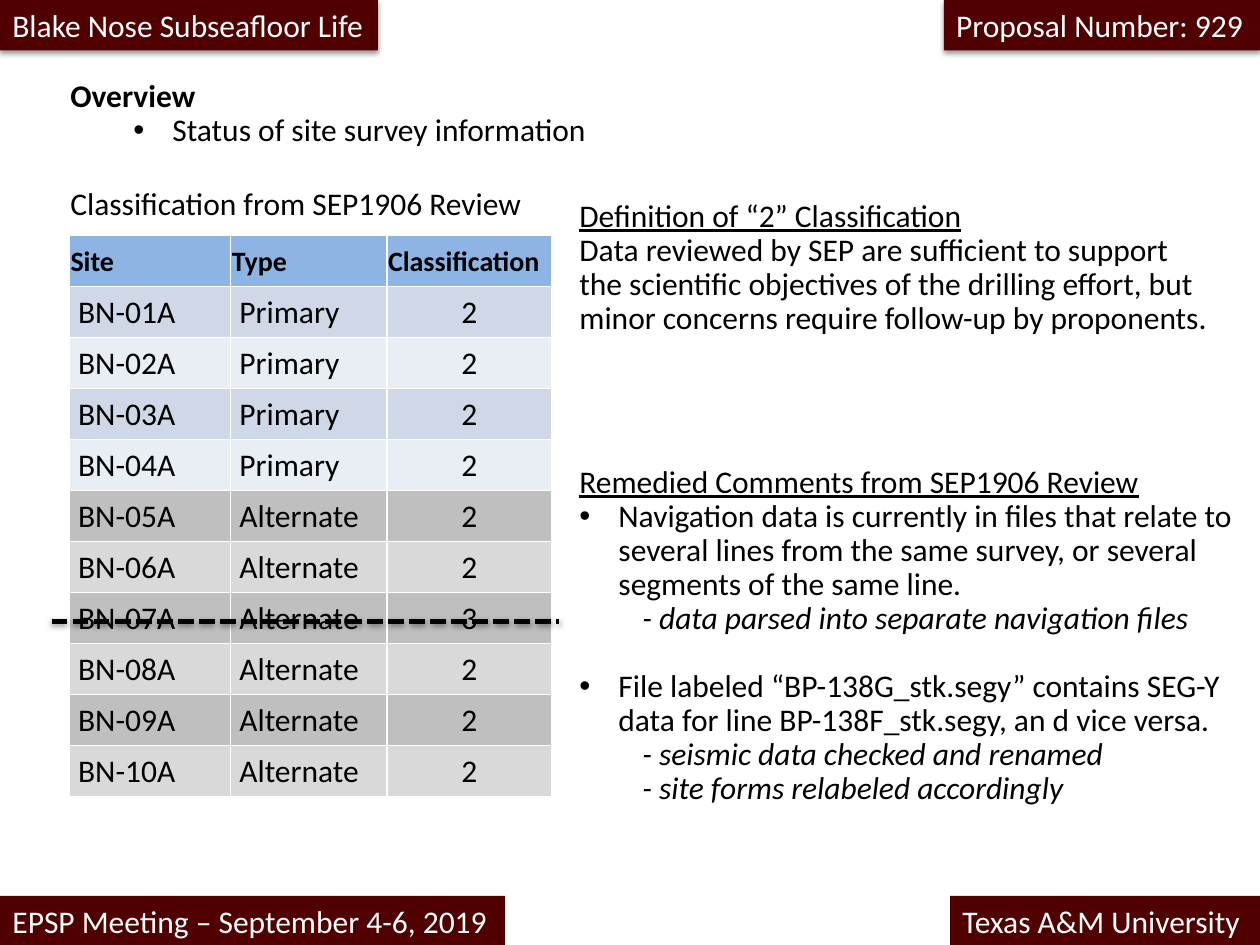
from lxml.etree import SubElement
from pptx import Presentation
from pptx.dml.color import RGBColor
from pptx.enum.dml import MSO_LINE
from pptx.enum.shapes import MSO_CONNECTOR, MSO_SHAPE
from pptx.enum.text import MSO_ANCHOR, MSO_AUTO_SIZE, PP_ALIGN
from pptx.oxml.ns import qn
from pptx.util import Inches, Pt

COLORS = {
    "maroon": "500000", "white": "FFFFFF", "black": "000000", "header": "8EB4E3",
    "Primary": ("D0D8E8", "E9EDF4"), "Alternate": ("BFBFBF", "D9D9D9"),
}
PLAIN = {}
BULLET = {"bullet": True, "left": 0.31, "hanging": 0.31}
ANSWER = {"level": 1, "left": 0.5, "font": {"italic": True}}
HEADING = {"font": {"underline": True}}
COLUMN_WIDTHS = (1.28, 1.24, 1.31)
ROW_HEIGHT = 0.405
SITE_COUNT, PRIMARY_COUNT = 10, 4


def rgb(value):
    return RGBColor.from_string(value)


def format_font(font, color=COLORS["black"], **values):
    for name, value in {"name": "Calibri", "size": Pt(18), **values}.items():
        setattr(font, name, value)
    font.color.rgb = rgb(color)


def add_soft_shadow(properties):
    """Put a short downward shadow on a shape or connector."""
    effects = properties.find(qn("a:effectLst"))
    if effects is None:
        effects = SubElement(properties, qn("a:effectLst"))
    shadow = SubElement(effects, qn("a:outerShdw"), blurRad=str(Pt(3.1)),
                        dist=str(Pt(1.6)), dir="5400000", rotWithShape="0")
    color = SubElement(shadow, qn("a:srgbClr"), val=COLORS["black"])
    SubElement(color, qn("a:alpha"), val="38000")


def add_banner(slide, text, left, top, width, shadow=False):
    shape = slide.shapes.add_shape(
        MSO_SHAPE.RECTANGLE, Inches(left), Inches(top), Inches(width), Inches(0.4))
    shape.shadow.inherit = False
    shape.fill.solid()
    shape.fill.fore_color.rgb = rgb(COLORS["maroon"])
    shape.line.fill.background()
    if shadow:
        add_soft_shadow(shape.element.spPr)
    frame = shape.text_frame
    frame.word_wrap = False
    frame.vertical_anchor = MSO_ANCHOR.TOP
    paragraph = frame.paragraphs[0]
    paragraph.text = text
    paragraph.alignment = PP_ALIGN.LEFT
    format_font(paragraph.runs[0].font, COLORS["white"])


def format_paragraph(paragraph, style, spacing):
    properties = paragraph._p.get_or_add_pPr()
    properties.set("marL", str(Inches(style.get("left", 0))))
    properties.set("indent", str(-Inches(style.get("hanging", 0))))
    if style.get("bullet"):
        SubElement(properties, qn("a:buFont"), typeface="Arial")
        SubElement(properties, qn("a:buChar"), char="•")
    paragraph.level = style.get("level", 0)
    paragraph.line_spacing = spacing
    if "before" in style:
        paragraph.space_before = Pt(style["before"])
    format_font(paragraph.runs[0].font, **style.get("font", {}))


def add_text(slide, box, lines, wrap=True, spacing=0.9):
    """Add a text box from (text, style) pairs."""
    frame = slide.shapes.add_textbox(*map(Inches, box)).text_frame
    frame.word_wrap = wrap
    frame.auto_size = MSO_AUTO_SIZE.SHAPE_TO_FIT_TEXT
    for index, (text, style) in enumerate(lines):
        paragraph = frame.add_paragraph() if index else frame.paragraphs[0]
        paragraph.text = text
        format_paragraph(paragraph, style, spacing)


def fill_cell(cell, text, fill, margin=0.01, centered=False, **font):
    cell.fill.solid()
    cell.fill.fore_color.rgb = rgb(fill)
    cell.vertical_anchor = MSO_ANCHOR.MIDDLE
    cell.margin_left = Inches(margin)
    cell.margin_right = cell.margin_top = Inches(0.01)
    cell.margin_bottom = 0
    paragraph = cell.text_frame.paragraphs[0]
    paragraph.text = text
    paragraph.alignment = PP_ALIGN.CENTER if centered else PP_ALIGN.LEFT
    format_font(paragraph.runs[0].font, **font)


def add_site_table(slide):
    row_count = SITE_COUNT + 1
    table = slide.shapes.add_table(
        row_count, len(COLUMN_WIDTHS), Inches(0.55), Inches(1.87),
        Inches(sum(COLUMN_WIDTHS)), Inches(ROW_HEIGHT * row_count)).table
    for column, width in zip(table.columns, COLUMN_WIDTHS):
        column.width = Inches(width)
    for row in table.rows:
        row.height = Inches(ROW_HEIGHT)
    for column, title in enumerate(("Site", "Type", "Classification")):
        fill_cell(table.cell(0, column), title, COLORS["header"], size=Pt(16), bold=True)
    for site in range(1, row_count):
        kind = "Primary" if site <= PRIMARY_COUNT else "Alternate"
        fill = COLORS[kind][(site - 1) % 2]
        values = (f"BN-{site:02}A", kind, "3" if site == 7 else "2")
        for column, value in enumerate(values):
            centered = column == 2
            fill_cell(table.cell(site, column), value, fill,
                      0.01 if centered else 0.07, centered, bold=False)


def add_strike_line(slide):
    """Draw the dashed line that strikes out site BN-07A."""
    y = Inches(4.93)
    connector = slide.shapes.add_connector(
        MSO_CONNECTOR.STRAIGHT, Inches(0.41), y, Inches(4.44), y)
    connector.line.color.rgb = rgb(COLORS["black"])
    connector.line.width = Pt(3)
    connector.line.dash_style = MSO_LINE.SQUARE_DOT
    add_soft_shadow(connector.element.spPr)


def main():
    presentation = Presentation()
    presentation.slide_width, presentation.slide_height = Inches(10), Inches(7.5)
    slide = presentation.slides.add_slide(presentation.slide_layouts[6])

    add_banner(slide, "Proposal Number: 929", 7.49, 0, 2.51, shadow=True)
    add_banner(slide, "Blake Nose Subseafloor Life", 0, 0, 3, shadow=True)
    add_text(slide, (0.46, 0.59, 4.34, 0.65), [
        ("Overview", {"font": {"bold": True}}),
        ("Status of site survey information", {**BULLET, "level": 1, "left": 0.81}),
    ], wrap=False)
    add_banner(slide, "EPSP Meeting – September 4-6, 2019", 0, 7.11, 4.01)
    add_banner(slide, "Texas A&M University", 7.54, 7.11, 2.46)
    add_site_table(slide)
    add_text(slide, (4.5, 1.54, 5.22, 1.2), [
        ("Definition of “2” Classification", HEADING),
        ("Data reviewed by SEP are sufficient to support the scientific objectives of "
         "the drilling effort, but minor concerns require follow-up by proponents.", PLAIN),
    ])
    add_strike_line(slide)
    add_text(slide, (4.5, 3.65, 5.42, 2.83), [
        ("Remedied Comments from SEP1906 Review", HEADING),
        ("Navigation data is currently in files that relate to several lines from the "
         "same survey, or several segments of the same line.", BULLET),
        ("- data parsed into separate navigation files", ANSWER),
        ("File labeled “BP-138G_stk.segy” contains SEG-Y data for line "
         "BP-138F_stk.segy, an d vice versa.", {**BULLET, "before": 19.5}),
        ("- seismic data checked and renamed", ANSWER),
        ("- site forms relabeled accordingly", ANSWER),
    ])
    add_text(slide, (0.46, 1.41, 3.95, 0.4),
             [("Classification from SEP1906 Review", PLAIN)], wrap=False, spacing=1.0)
    presentation.save("out.pptx")


if __name__ == "__main__":
    main()
